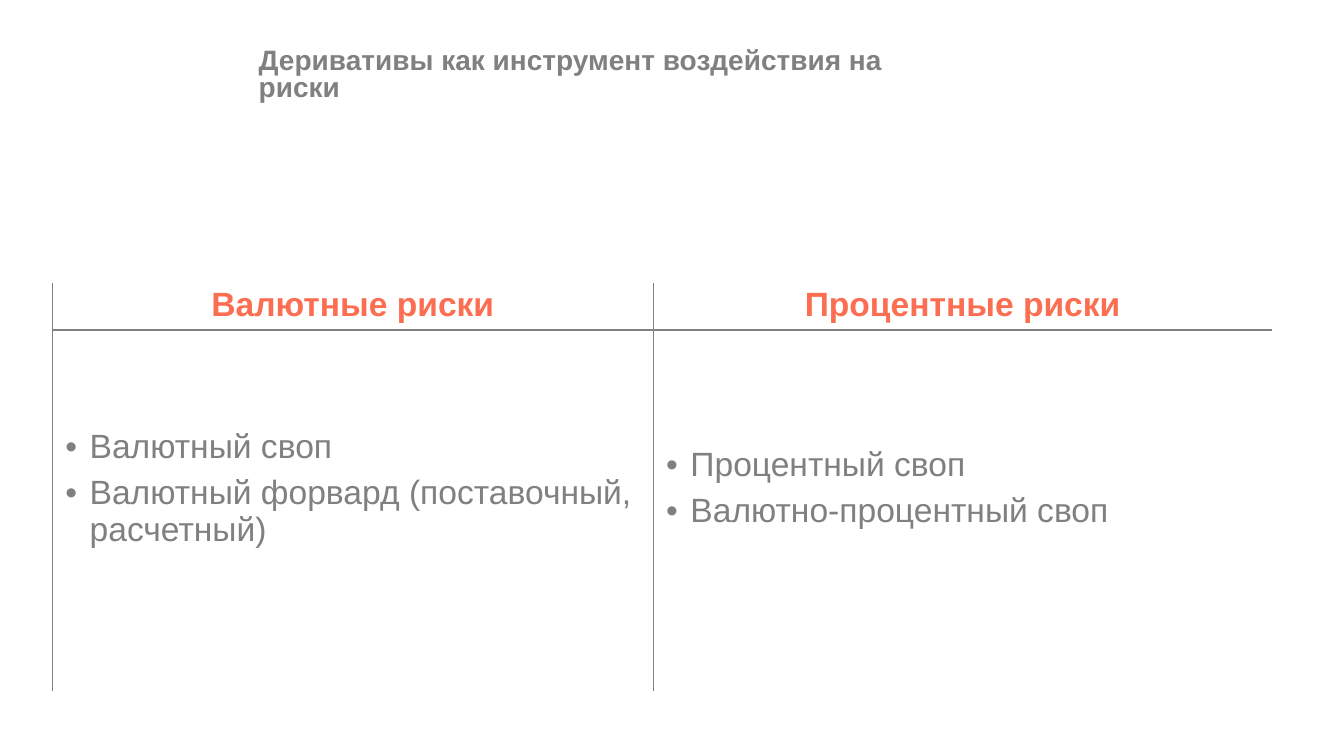
from lxml import etree
from pptx import Presentation
from pptx.dml.color import RGBColor
from pptx.enum.text import MSO_ANCHOR, PP_ALIGN
from pptx.oxml.ns import qn
from pptx.util import Cm, Pt

MIDDLE, TOP = MSO_ANCHOR.MIDDLE, MSO_ANCHOR.TOP
CENTER = PP_ALIGN.CENTER

FONT = "Arial"
GREY = "808080"
CORAL = "FC6E51"

TITLE = "Деривативы как инструмент воздействия на риски"
RISKS = [
    ("Валютные риски",
     ["Валютный своп", "Валютный форвард (поставочный, расчетный)"]),
    ("Процентные риски",
     ["Процентный своп", "Валютно-процентный своп"]),
]
COLUMN_WIDTHS = [15.14, 15.6]
ROW_HEIGHTS = [1.17, 9.1]


def rgb(color):
    return RGBColor.from_string(color)


def add_run(paragraph, text, size, color, bold=False):
    run = paragraph.add_run()
    run.text = text
    run.font.name = FONT
    run.font.size = Pt(size)
    run.font.bold = bold
    run.font.color.rgb = rgb(color)


def add_title(slide):
    title = slide.shapes.add_textbox(Cm(6.27), Cm(0.41), Cm(17.86), Cm(3))
    frame = title.text_frame
    frame.word_wrap = True
    frame.vertical_anchor = MIDDLE
    heading = frame.paragraphs[0]
    heading.line_spacing = 0.8
    add_run(heading, TITLE, 20, GREY, bold=True)


def set_borders(cell, visible_sides):
    properties = cell._tc.get_or_add_tcPr()
    for side in "LRTB":
        line = etree.SubElement(properties, qn(f"a:ln{side}"), w=str(Pt(1)))
        if side in visible_sides:
            fill = etree.SubElement(line, qn("a:solidFill"))
            etree.SubElement(fill, qn("a:srgbClr"), val=GREY)
        else:
            etree.SubElement(line, qn("a:noFill"))


def format_cell(cell, anchor, visible_sides, margin_bottom=0.08):
    cell.margin_left = cell.margin_right = Cm(0.33)
    cell.margin_top = Cm(0.08)
    cell.margin_bottom = Cm(margin_bottom)
    cell.vertical_anchor = anchor
    set_borders(cell, visible_sides)
    cell.fill.background()


def add_bullet(paragraph, text):
    paragraph.level = 1
    properties = paragraph._p.get_or_add_pPr()
    properties.set("marL", str(Cm(0.61)))
    properties.set("indent", str(-Cm(0.61)))
    etree.SubElement(properties, qn("a:buFont"), typeface=FONT)
    etree.SubElement(properties, qn("a:buChar"), char="•")
    paragraph.space_after = Pt(6)
    add_run(paragraph, text, 24, GREY)


def add_risk_table(slide):
    frame = slide.shapes.add_table(
        len(ROW_HEIGHTS), len(RISKS), Cm(1.32), Cm(7.14),
        Cm(sum(COLUMN_WIDTHS)), Cm(sum(ROW_HEIGHTS)))
    table = frame.table
    table.first_row = table.horz_banding = False
    for column, width in zip(table.columns, COLUMN_WIDTHS):
        column.width = Cm(width)
    for row, height in zip(table.rows, ROW_HEIGHTS):
        row.height = Cm(height)

    for index, (risk, instruments) in enumerate(RISKS):
        # Every column has a line on its left, none on the table's right edge
        sides = "L" if index == len(RISKS) - 1 else "LR"

        # Risk heading
        header = table.cell(0, index)
        format_cell(header, TOP, sides + "B")
        heading = header.text_frame.paragraphs[0]
        heading.alignment = CENTER
        add_run(heading, risk, 24, CORAL, bold=True)

        # Instruments for this risk, lifted slightly above the cell's middle
        body = table.cell(1, index)
        format_cell(body, MIDDLE, sides + "T", margin_bottom=1.21)
        text = body.text_frame
        for number, instrument in enumerate(instruments):
            paragraph = text.add_paragraph() if number else text.paragraphs[0]
            add_bullet(paragraph, instrument)


def main():
    presentation = Presentation()
    presentation.slide_width = Cm(33.87)
    presentation.slide_height = Cm(19.05)
    slide = presentation.slides.add_slide(presentation.slide_layouts[6])
    add_title(slide)
    add_risk_table(slide)
    presentation.save("out.pptx")


if __name__ == "__main__":
    main()
